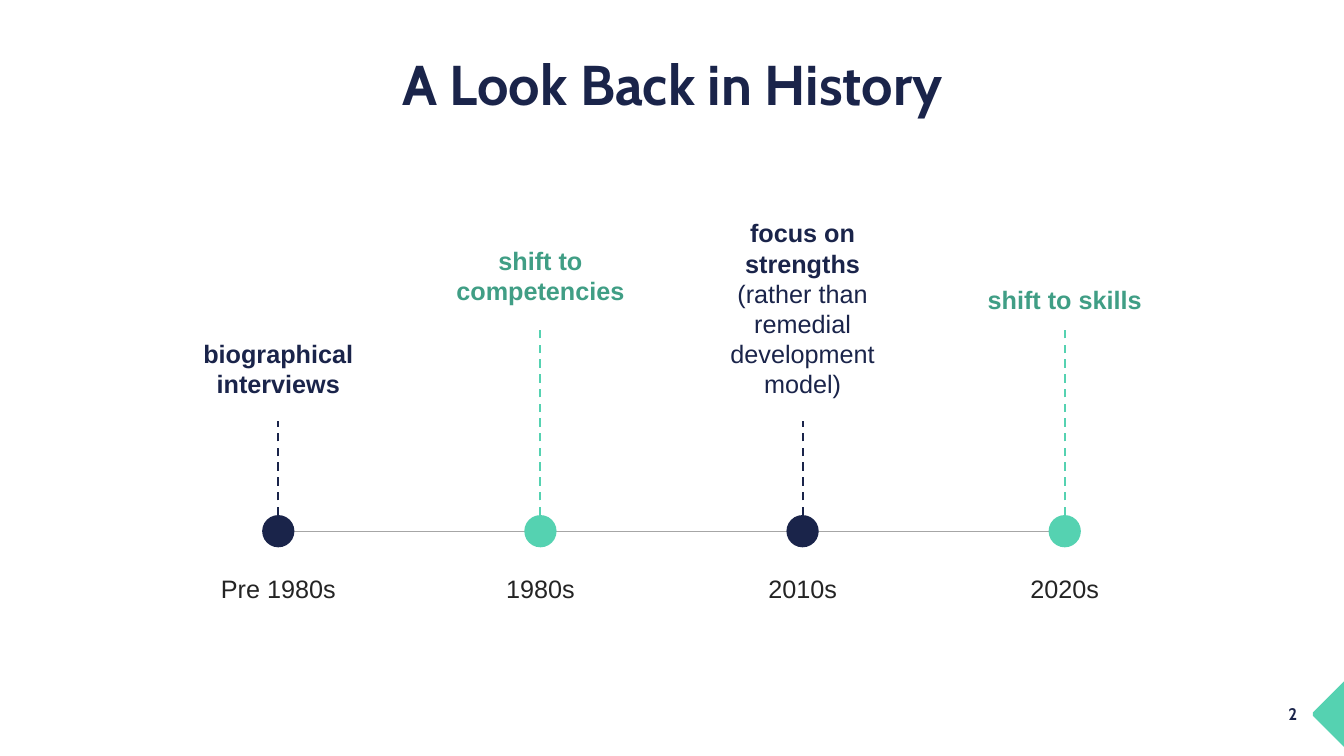
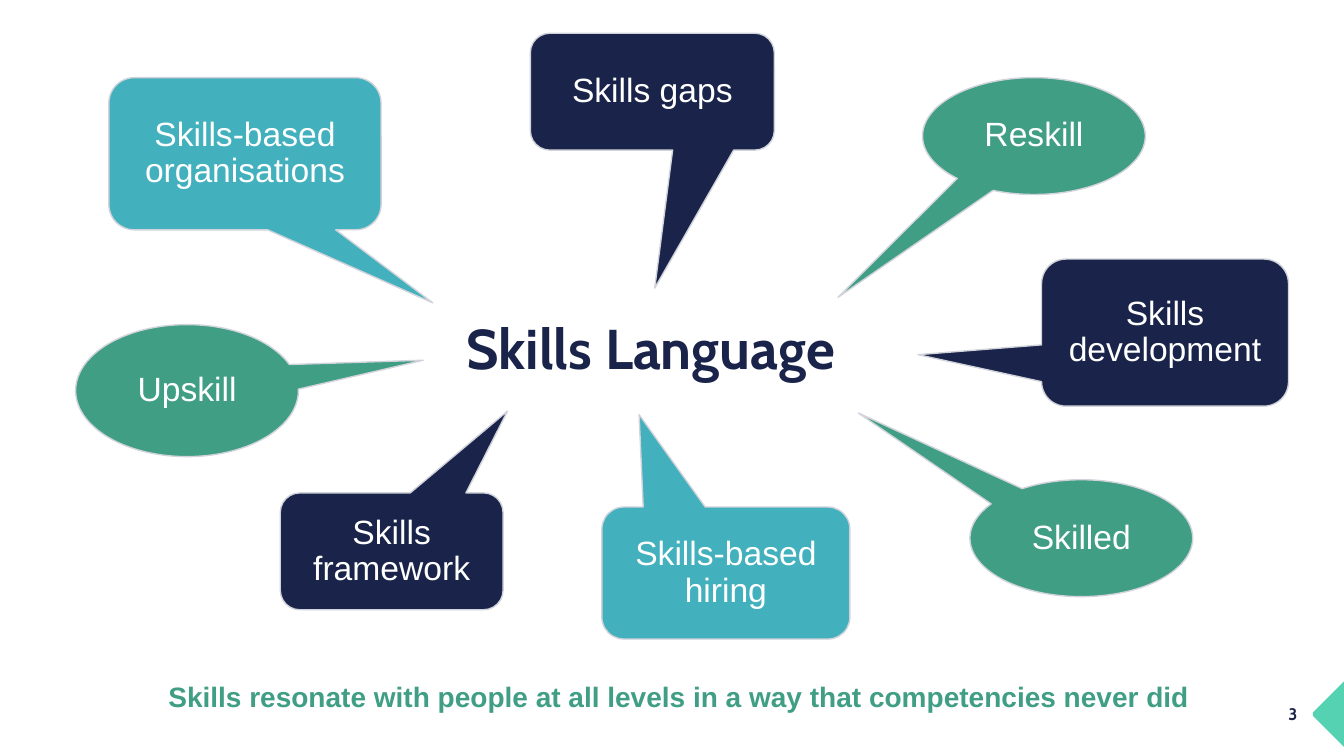
from pptx import Presentation
from pptx.dml.color import RGBColor
from pptx.enum.dml import MSO_LINE_DASH_STYLE as Dash
from pptx.enum.shapes import MSO_CONNECTOR as Connector, MSO_SHAPE as Preset
from pptx.enum.text import MSO_ANCHOR as Anchor, PP_ALIGN as Align
from pptx.oxml.ns import qn
from pptx.util import Inches, Pt
from lxml.etree import SubElement

NAVY, MINT, GREEN, TEAL = "1A244A", "55D2B1", "409E85", "43B0BE"
INK, WHITE, AXIS_GREY, OUTLINE = "242424", "FFFFFF", "A6A6A6", "D1D3DB"
HEADING, BODY = "Cabin", "Arial"
CORNER = [(13.33, 6.76), (13.02, 7.07), (13.02, 7.1), (13.33, 7.41)]

HISTORY_TITLE = "A Look Back in History"
# year, bold event, plain detail, lines of text, text top, stem top, node colour, text colour
ERAS = [
    ("Pre 1980s", "biographical interviews", "", 2, 3.31, 4.18, NAVY, NAVY),
    ("1980s", "shift to competencies", "", 2, 2.38, 3.24, MINT, GREEN),
    ("2010s", "focus on strengths", "(rather than remedial development model)",
     6, 2.11, 4.18, NAVY, NAVY),
    ("2020s", "shift to skills", "", 1, 2.77, 3.24, MINT, GREEN),
]
FIRST_NODE, NODE_PITCH, NODE_SIZE, AXIS_Y = 2.76, 2.6, 0.32, 5.27
LABEL_WIDTH, LABEL_PADDING, LINE_HEIGHT = 2.39, 0.1, 0.3

LANGUAGE_TITLE = "Skills Language"
ROUND, OVAL = Preset.ROUNDED_RECTANGULAR_CALLOUT, Preset.OVAL_CALLOUT
# term, outline, colour, (left, top, width, height), pointer tip relative to the centre
TERMS = [
    ("Upskill", OVAL, GREEN, (0.75, 3.22, 2.21, 1.31), (1.06, -0.23)),
    ("Reskill", OVAL, GREEN, (9.15, 0.77, 2.21, 1.16), (-0.88, 1.38)),
    ("Skills-based organisations", ROUND, TEAL, (1.08, 0.77, 2.7, 1.51), (0.69, 0.98)),
    ("Skilled", OVAL, GREEN, (9.62, 4.76, 2.21, 1.16), (-1, -1.07)),
    ("Skills development", ROUND, NAVY, (10.33, 2.57, 2.45, 1.46), (-1, 0.15)),
    ("Skills framework", ROUND, NAVY, (2.78, 4.89, 2.21, 1.16), (0.52, -1.2)),
    ("Skills-based hiring", ROUND, TEAL, (5.97, 5.03, 2.46, 1.31), (-0.35, -1.2)),
    ("Skills gaps", ROUND, NAVY, (5.26, 0.33, 2.42, 1.16), (0.01, 1.68)),
]
TAKEAWAY = "Skills resonate with people at all levels in a way that competencies never did"


def rgb(colour):
    return RGBColor.from_string(colour)


def add_run(paragraph, text, size, colour, bold=False, font=BODY):
    run = paragraph.add_run()
    run.text = text
    run.font.name, run.font.size, run.font.bold = font, Pt(size), bold
    run.font.color.rgb = rgb(colour)


def add_text(slide, box, text, size, colour, bold=False, font=BODY, align=Align.CENTER):
    """Add a wrapping one-paragraph text box and return its frame."""
    frame = slide.shapes.add_textbox(*map(Inches, box)).text_frame
    frame.word_wrap = True
    frame.paragraphs[0].alignment = align
    add_run(frame.paragraphs[0], text, size, colour, bold, font)
    return frame


def add_title(slide, text, box, align):
    frame = add_text(slide, box, text, 40, NAVY, True, HEADING, align)
    frame.vertical_anchor = Anchor.MIDDLE
    frame.paragraphs[0].line_spacing = 0.9


def paint(shape, fill, outline=None):
    shape.shadow.inherit = False
    shape.fill.solid()
    shape.fill.fore_color.rgb = rgb(fill)
    if outline:
        shape.line.color.rgb = rgb(outline)
        shape.line.width = Pt(1)
    else:
        shape.line.fill.background()


def add_line(slide, start, end, colour, width):
    line = slide.shapes.add_connector(Connector.STRAIGHT, *map(Inches, start + end))
    line.line.color.rgb = rgb(colour)
    line.line.width = Pt(width)
    SubElement(line._element.spPr, qn("a:effectLst"))
    return line


def add_slide(prs, number):
    """Add a blank slide with the corner arrow and page number."""
    slide = prs.slides.add_slide(prs.slide_layouts[6])
    first, *rest = [(Inches(x), Inches(y)) for x, y in CORNER]
    outline = slide.shapes.build_freeform(*first)
    outline.add_line_segments(rest)
    paint(outline.convert_to_shape(), MINT)
    add_text(slide, (12.68, 6.93, 0.4, 0.5), str(number), 12, NAVY, True, HEADING, Align.LEFT)
    return slide


def add_era(slide, centre, era):
    year, event, detail, lines, text_top, stem_top, node_colour, text_colour = era
    radius = NODE_SIZE / 2
    node = slide.shapes.add_shape(Preset.OVAL, Inches(centre - radius), Inches(AXIS_Y - radius),
                                  Inches(NODE_SIZE), Inches(NODE_SIZE))
    paint(node, node_colour)
    stem = add_line(slide, (centre, AXIS_Y - radius), (centre, stem_top), node_colour, 1.5)
    stem.line.dash_style = Dash.DASH
    stem.begin_connect(node, 0)

    left = centre - LABEL_WIDTH / 2
    add_text(slide, (left, 5.64, LABEL_WIDTH, 0.4), year, 18, INK)
    height = LABEL_PADDING + lines * LINE_HEIGHT
    label = add_text(slide, (left, text_top, LABEL_WIDTH, height), event, 18, text_colour, True)
    if detail:
        label.paragraphs[0].add_line_break()
        add_run(label.paragraphs[0], detail, 18, text_colour)


def add_callout(slide, term, outline, colour, box, tip):
    callout = slide.shapes.add_shape(outline, *map(Inches, box))
    callout.adjustments[0], callout.adjustments[1] = tip
    paint(callout, colour, OUTLINE)
    frame = callout.text_frame
    frame.word_wrap = True
    frame.vertical_anchor = Anchor.MIDDLE
    frame.margin_left = frame.margin_right = Inches(0.18)
    frame.margin_top = frame.margin_bottom = Inches(0.18)
    paragraph = frame.paragraphs[0]
    paragraph.alignment = Align.CENTER
    paragraph.line_spacing = 0.9
    add_run(paragraph, term, 24, WHITE)


def build_history(prs):
    slide = add_slide(prs, 2)
    add_title(slide, HISTORY_TITLE, (0.92, 0.47, 11.5, 0.79), Align.CENTER)
    centres = [FIRST_NODE + i * NODE_PITCH for i in range(len(ERAS))]
    add_line(slide, (centres[0], AXIS_Y), (centres[-1], AXIS_Y), AXIS_GREY, 0.5)
    for centre, era in zip(centres, ERAS):
        add_era(slide, centre, era)


def build_language(prs):
    slide = add_slide(prs, 3)
    add_title(slide, LANGUAGE_TITLE, (4.53, 3.09, 4.41, 0.79), Align.LEFT)
    for term in TERMS:
        add_callout(slide, *term)
    add_text(slide, (0.14, 6.69, 13.19, 0.74), TAKEAWAY, 20, GREEN, True)


def main():
    prs = Presentation()
    prs.slide_width, prs.slide_height = Inches(13.33), Inches(7.5)
    build_history(prs)
    build_language(prs)
    prs.save("out.pptx")


if __name__ == "__main__":
    main()
